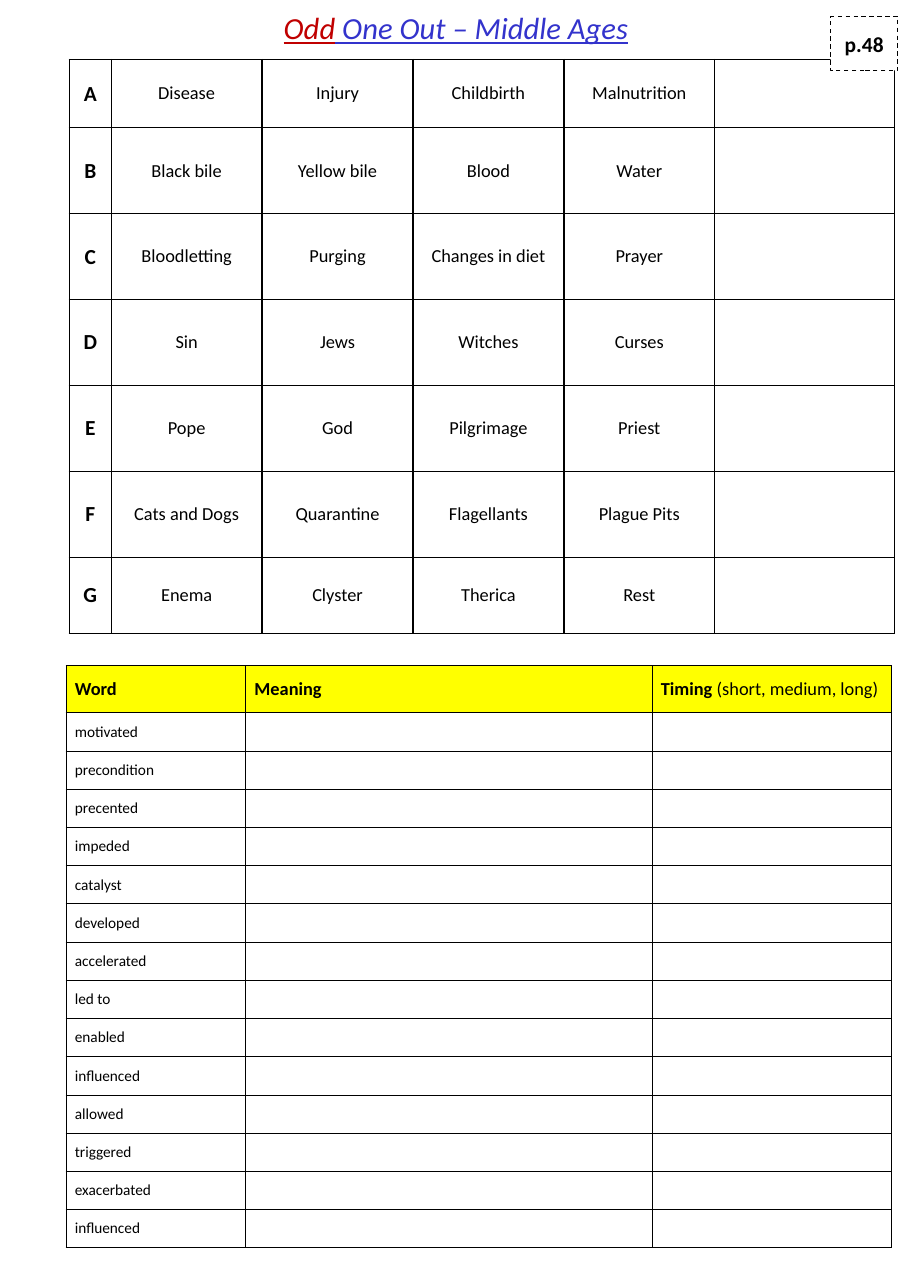
from lxml import etree
from pptx import Presentation
from pptx.dml.color import RGBColor
from pptx.enum.dml import MSO_LINE
from pptx.enum.shapes import MSO_SHAPE
from pptx.enum.text import MSO_ANCHOR, PP_ALIGN
from pptx.oxml.ns import qn
from pptx.util import Inches, Pt

BLACK = RGBColor(0x00, 0x00, 0x00)
WHITE = RGBColor(0xFF, 0xFF, 0xFF)
YELLOW = RGBColor(0xFF, 0xFF, 0x00)
RED = RGBColor(0xC0, 0x00, 0x00)
BLUE = RGBColor(0x33, 0x33, 0xCC)

ODD_ONE_OUT = [
    ("A", "Disease", "Injury", "Childbirth", "Malnutrition", ""),
    ("B", "Black bile", "Yellow bile", "Blood", "Water", ""),
    ("C", "Bloodletting", "Purging", "Changes in diet", "Prayer", ""),
    ("D", "Sin", "Jews", "Witches", "Curses", ""),
    ("E", "Pope", "God", "Pilgrimage", "Priest", ""),
    ("F", "Cats and Dogs", "Quarantine", "Flagellants", "Plague Pits", ""),
    ("G", "Enema", "Clyster", "Therica", "Rest", ""),
]
HEADINGS = [("Word", ""), ("Meaning", ""), ("Timing ", "(short, medium, long)")]
WORDS = ["motivated", "precondition", "precented", "impeded", "catalyst",
         "developed", "accelerated", "led to", "enabled", "influenced",
         "allowed", "triggered", "exacerbated", "influenced"]


def add_span(para, text, size, color=BLACK, bold=False, italic=False, underline=False):
    span = para.add_run()
    span.text = text
    font = span.font
    font.name, font.size, font.color.rgb = "Calibri", Pt(size), color
    font.bold, font.italic, font.underline = bold, italic, underline


def set_margins(target, across, down):
    target.margin_left = target.margin_right = Inches(across)
    target.margin_top = target.margin_bottom = Inches(down)


def set_borders(cell, width):
    properties = cell._tc.get_or_add_tcPr()
    for side in ("lnL", "lnR", "lnT", "lnB"):
        line = etree.SubElement(properties, qn(f"a:{side}"), w=str(Pt(width)))
        fill = etree.SubElement(line, qn("a:solidFill"))
        etree.SubElement(fill, qn("a:srgbClr"), val=str(BLACK))


def add_grid(page, left, top, widths, heights, border):
    """Add a plain bordered table; heights are given as lengths."""
    frame = page.shapes.add_table(len(heights), len(widths), Inches(left), Inches(top),
                                  Inches(sum(widths)), sum(heights))
    table = frame.table
    table.first_row = table.horz_banding = False
    for column, width in zip(table.columns, widths):
        column.width = Inches(width)
    for row, height in zip(table.rows, heights):
        row.height = height
    for cell in table.iter_cells():
        set_borders(cell, border)
        cell.fill.background()
        cell.vertical_anchor = MSO_ANCHOR.MIDDLE
    return table


def add_title(page):
    box = page.shapes.add_textbox(Inches(0.42), Inches(0.04), Inches(7.44), Inches(0.46))
    frame = box.text_frame
    frame.word_wrap = True
    frame.vertical_anchor = MSO_ANCHOR.MIDDLE
    set_margins(frame, 0, 0)
    para = frame.paragraphs[0]
    para.alignment = PP_ALIGN.CENTER
    para.line_spacing = 0.93
    add_span(para, "Odd", 20, RED, italic=True, underline=True)
    add_span(para, " One Out – Middle Ages", 20, BLUE, italic=True, underline=True)


def add_odd_one_out(page):
    heights = [Inches(0.62)] + [Inches(0.78)] * 5 + [Inches(0.69)]
    table = add_grid(page, 0.63, 0.54, [0.38] + [1.37] * 4 + [1.63], heights, 1)
    for row, texts in zip(table.rows, ODD_ONE_OUT):
        for index, (cell, text) in enumerate(zip(row.cells, texts)):
            set_margins(cell, 0.08, 0.08)
            para = cell.text_frame.paragraphs[0]
            para.alignment = PP_ALIGN.CENTER
            if text:
                is_letter = index == 0
                add_span(para, text, 14 if is_letter else 12, bold=is_letter)


def add_word_list(page):
    row_height = Inches(4.86) // len(WORDS)
    heights = [Inches(0.43)] + [row_height] * len(WORDS)
    table = add_grid(page, 0.6, 6.04, [1.63, 3.69, 2.17], heights, 0.75)
    for cell in table.iter_cells():
        set_margins(cell, 0.08, 0.01)
    # Heading row
    for cell, (heading, note) in zip(table.rows[0].cells, HEADINGS):
        cell.fill.solid()
        cell.fill.fore_color.rgb = YELLOW
        cell.vertical_anchor = MSO_ANCHOR.TOP
        set_margins(cell, 0.08, 0.11)
        para = cell.text_frame.paragraphs[0]
        add_span(para, heading, 12, bold=True)
        if note:
            add_span(para, note, 12)
    # Words
    for index, word in enumerate(WORDS, start=1):
        add_span(table.cell(index, 0).text_frame.paragraphs[0], word, 10)


def add_page_reference(page):
    box = page.shapes.add_shape(MSO_SHAPE.RECTANGLE, Inches(7.54), Inches(0.15),
                                Inches(0.61), Inches(0.49))
    box.shadow.inherit = False
    box.fill.solid()
    box.fill.fore_color.rgb = WHITE
    box.line.color.rgb = BLACK
    box.line.width = Pt(0.75)
    box.line.dash_style = MSO_LINE.DASH
    frame = box.text_frame
    frame.word_wrap = False
    frame.vertical_anchor = MSO_ANCHOR.MIDDLE
    set_margins(frame, 0.1, 0.1)
    para = frame.paragraphs[0]
    para.alignment = PP_ALIGN.CENTER
    add_span(para, "p.48", 14, bold=True)


def main():
    deck = Presentation()
    deck.slide_width, deck.slide_height = Inches(8.27), Inches(11.69)
    page = deck.slides.add_slide(deck.slide_layouts[6])
    add_title(page)
    add_odd_one_out(page)
    add_word_list(page)
    add_page_reference(page)
    deck.save("out.pptx")


if __name__ == "__main__":
    main()
